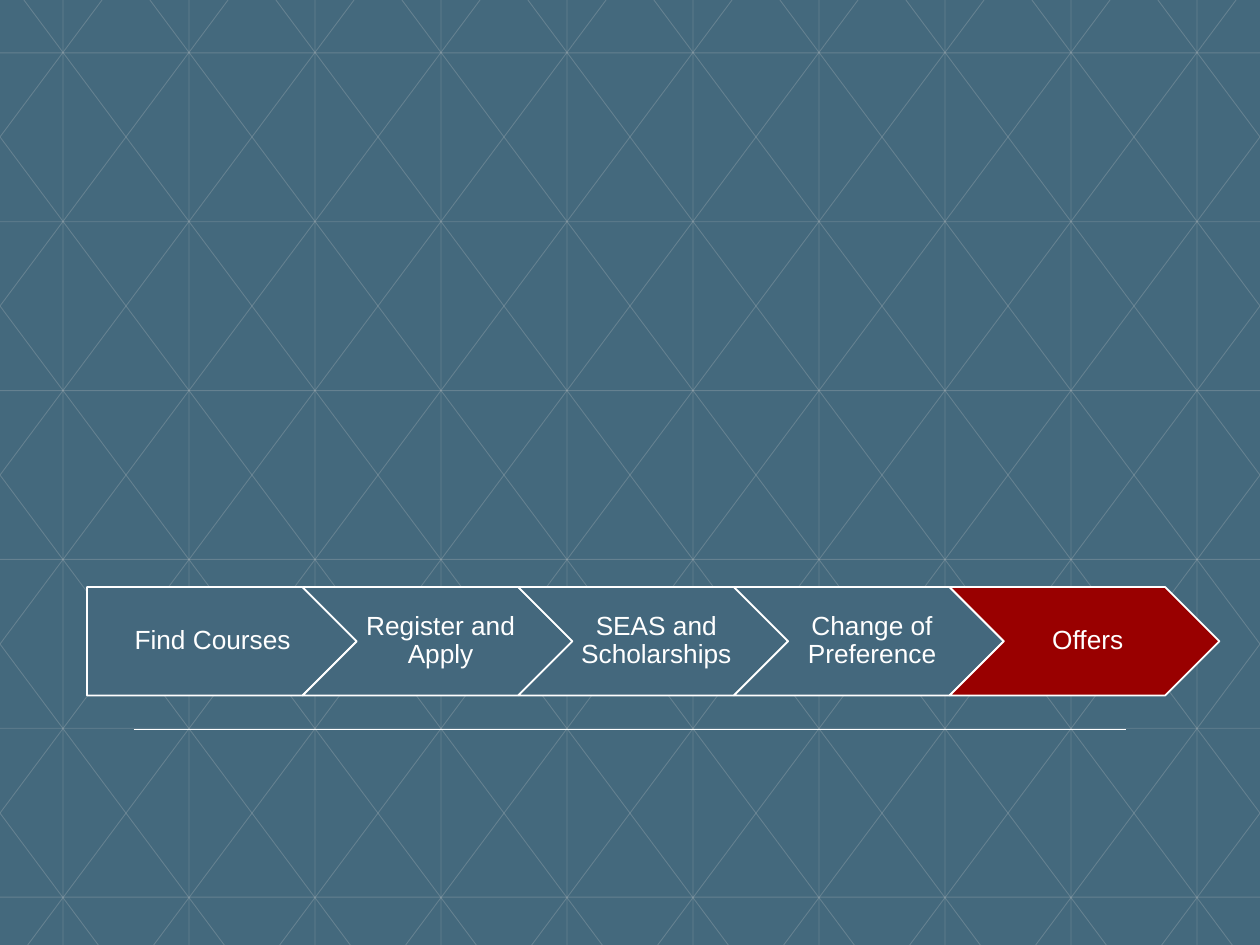
from lxml.etree import SubElement
from pptx import Presentation
from pptx.dml.color import RGBColor
from pptx.enum.shapes import MSO_CONNECTOR, MSO_SHAPE
from pptx.enum.text import MSO_ANCHOR, PP_ALIGN
from pptx.oxml.ns import qn
from pptx.util import Inches, Pt

STEPS = ["Find Courses", "Register and Apply", "SEAS and Scholarships",
         "Change of Preference", "Offers"]
CURRENT_STEP = "Offers"
COLORS = {"background": "44697D", "grid": "C4C7C8", "step": "44687D",
          "current": "990000", "white": "FFFFFF"}
FONT = "Arial"

WIDTH, HEIGHT = 10, 7.5
# Background lattice
COLUMN_START, COLUMN_GAP = 0.5, 1
ROW_START, ROW_GAP = 0.42, 1.34
DIAGONAL_START, DIAGONAL_RUN = 0.19, 5.59
GRID_ALPHA = 25
# Process chain
CHAIN_LEFT, CHAIN_TOP = 0.69, 4.66
STEP_WIDTH, STEP_HEIGHT = 2.14, 0.86
STEP_PITCH = STEP_WIDTH * 0.8
RULE_MARGIN, RULE_TOP = 1.06, 5.79


def color(name):
    return RGBColor.from_string(COLORS[name])


def add_line(slide, start, end, color_name, width, alpha=None):
    points = [Inches(value) for value in (*start, *end)]
    line = slide.shapes.add_connector(MSO_CONNECTOR.STRAIGHT, *points)
    line.line.color.rgb = color(color_name)
    line.line.width = Pt(width)
    properties = line._element.spPr
    if alpha is not None:
        fill = properties.find(".//" + qn("a:srgbClr"))
        SubElement(fill, qn("a:alpha"), val=str(alpha * 1000))
    SubElement(properties, qn("a:effectLst"))


def clipped_diagonal(top_x):
    """Ends of a diagonal falling to the right, cut at the slide's edges."""
    slope = HEIGHT / DIAGONAL_RUN
    left = max(top_x, 0)
    right = min(top_x + DIAGONAL_RUN, WIDTH)
    return (left, (left - top_x) * slope), (right, (right - top_x) * slope)


def add_lattice(slide):
    lines = []
    for column in range(10):
        x = COLUMN_START + column * COLUMN_GAP
        lines.append(((x, 0), (x, HEIGHT)))
    for row in range(6):
        y = ROW_START + row * ROW_GAP
        lines.append(((0, y), (WIDTH, y)))
    falling = [clipped_diagonal(DIAGONAL_START + step * COLUMN_GAP)
               for step in range(-5, 10)]
    rising = [tuple((WIDTH - x, y) for x, y in ends) for ends in falling]
    for start, end in lines + falling + rising:
        add_line(slide, start, end, "grid", 0.5, GRID_ALPHA)


def add_step(slide, index, label):
    kind = MSO_SHAPE.CHEVRON if index else MSO_SHAPE.PENTAGON
    shape = slide.shapes.add_shape(
        kind, Inches(CHAIN_LEFT + index * STEP_PITCH), Inches(CHAIN_TOP),
        Inches(STEP_WIDTH), Inches(STEP_HEIGHT))
    shape.shadow.inherit = False
    shape.fill.solid()
    shape.fill.fore_color.rgb = color("current" if label == CURRENT_STEP else "step")
    shape.line.color.rgb = color("white")
    shape.line.width = Pt(1)

    frame = shape.text_frame
    frame.word_wrap = True
    frame.vertical_anchor = MSO_ANCHOR.MIDDLE
    frame.margin_left = Inches(0.05 if index else 0.07)
    frame.margin_right = 0
    frame.margin_top = frame.margin_bottom = Inches(0.04)
    paragraph = frame.paragraphs[0]
    paragraph.text = label
    paragraph.alignment = PP_ALIGN.CENTER
    paragraph.line_spacing = 0.9
    paragraph.font.name = FONT
    paragraph.font.size = Pt(15)
    paragraph.font.color.rgb = color("white")


def main():
    presentation = Presentation()
    presentation.slide_width = Inches(WIDTH)
    presentation.slide_height = Inches(HEIGHT)
    slide = presentation.slides.add_slide(presentation.slide_layouts[6])
    slide.background.fill.solid()
    slide.background.fill.fore_color.rgb = color("background")

    add_lattice(slide)
    add_line(slide, (RULE_MARGIN, RULE_TOP), (WIDTH - RULE_MARGIN, RULE_TOP), "white", 1)
    for index, label in enumerate(STEPS):
        add_step(slide, index, label)
    presentation.save("out.pptx")


if __name__ == "__main__":
    main()
